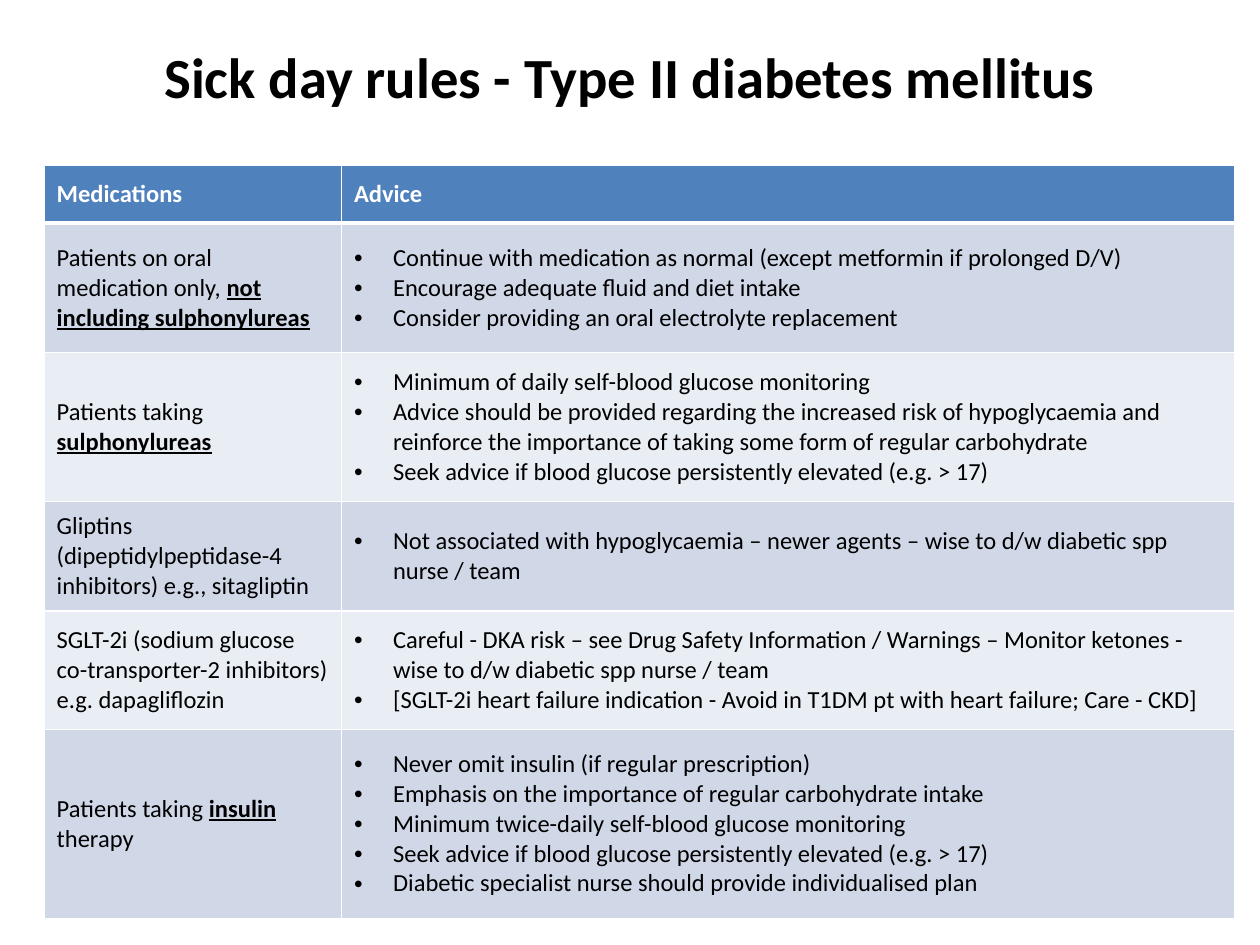
"""Build the slide on sick day rules for type II diabetes."""
from lxml.etree import SubElement
from pptx import Presentation
from pptx.dml.color import RGBColor as RGB
from pptx.enum.text import MSO_ANCHOR as Anchor, PP_ALIGN as Align
from pptx.oxml.ns import qn
from pptx.util import Inches, Pt

HUES = {"head": "4F81BD", "odd": "D0D8E8", "even": "E9EDF4",
        "ink": "000000", "white": "FFFFFF"}
COLS = [2.36, 7.09]
ROWS = [0.46, 1.03, 1.18, 0.87, 0.94, 1.5]
SEEK = "Seek advice if blood glucose persistently elevated (e.g. > 17)"
RULES = [
    ("Patients on oral medication only, *not including sulphonylureas*", [
        "Continue with medication as normal (except metformin if prolonged D/V)",
        "Encourage adequate fluid and diet intake",
        "Consider providing an oral electrolyte replacement"]),
    ("Patients taking *sulphonylureas*", [
        "Minimum of daily self-blood glucose monitoring",
        "Advice should be provided regarding the increased risk of hypoglycaemia "
        "and reinforce the importance of taking some form of regular carbohydrate",
        SEEK]),
    ("Gliptins (dipeptidylpeptidase-4 inhibitors) e.g., sitagliptin", [
        "Not associated with hypoglycaemia – newer agents – "
        "wise to d/w diabetic spp nurse / team"]),
    ("SGLT-2i (sodium glucose co-transporter-2 inhibitors) e.g. dapagliflozin", [
        "Careful - DKA risk – see Drug Safety Information / Warnings – "
        "Monitor ketones - wise to d/w diabetic spp nurse / team",
        "[SGLT-2i heart failure indication - Avoid in T1DM pt with heart failure; "
        "Care - CKD]"]),
    ("Patients taking *insulin* therapy", [
        "Never omit insulin (if regular prescription)",
        "Emphasis on the importance of regular carbohydrate intake",
        "Minimum twice-daily self-blood glucose monitoring",
        SEEK,
        "Diabetic specialist nurse should provide individualised plan"]),
]


def style(para, size, hue, bold=None):
    font = para.font
    font.name, font.size, font.bold = "Calibri", Pt(size), bold
    font.color.rgb = RGB.from_string(HUES[hue])


def fill(cell, lines, back, hue="ink", bold=False, dots=False):
    edges = cell._tc.get_or_add_tcPr()
    for side in "LRTB":
        thick = 3 if back == "head" and side == "B" else 1
        edge = SubElement(edges, qn(f"a:ln{side}"), w=str(Pt(thick)))
        paint = SubElement(edge, qn("a:solidFill"))
        SubElement(paint, qn("a:srgbClr"), val=HUES["white"])
    cell.fill.solid()
    cell.fill.fore_color.rgb = RGB.from_string(HUES[back])
    cell.vertical_anchor = Anchor.MIDDLE
    frame = cell.text_frame
    for i, line in enumerate(lines):
        para = frame.add_paragraph() if i else frame.paragraphs[0]
        if dots:
            props = para._p.get_or_add_pPr()
            props.set("marL", str(Inches(0.31)))
            props.set("indent", str(-Inches(0.31)))
            SubElement(props, qn("a:buFont")).set("typeface", "Arial")
            SubElement(props, qn("a:buChar")).set("char", "•")
        style(para, 14, hue, bold)
        for j, part in enumerate(line.split("*")):
            if part:
                run = para.add_run()
                run.text = part
                if j % 2:
                    run.font.bold = run.font.underline = True
                else:
                    run.font.bold = bold


deck = Presentation()
deck.slide_width, deck.slide_height = Inches(10), Inches(7.5)
wide, high = deck.slide_width, deck.slide_height
slide = deck.slides.add_slide(deck.slide_layouts[6])

box = slide.shapes.add_textbox(
    int(wide * 0.05), int(high * 0.04), int(wide * 0.9), int(high * 0.08))
frame = box.text_frame
frame.word_wrap = True
frame.vertical_anchor = Anchor.MIDDLE
title = frame.paragraphs[0]
title.text = "Sick day rules - Type II diabetes mellitus"
title.alignment = Align.CENTER
style(title, 32.4, "ink", True)

table = slide.shapes.add_table(
    len(ROWS), len(COLS), Inches(0.35), Inches(1.31),
    Inches(sum(COLS)), Inches(sum(ROWS))).table
for col, size in zip(table.columns, COLS):
    col.width = Inches(size)
for row, size in zip(table.rows, ROWS):
    row.height = Inches(size)

for c, name in enumerate(["Medications", "Advice"]):
    fill(table.cell(0, c), [name], "head", "white", True)
for r, (drug, tips) in enumerate(RULES, 1):
    back = "odd" if r % 2 else "even"
    fill(table.cell(r, 0), [drug], back)
    fill(table.cell(r, 1), tips, back, dots=True)

deck.save("out.pptx")
